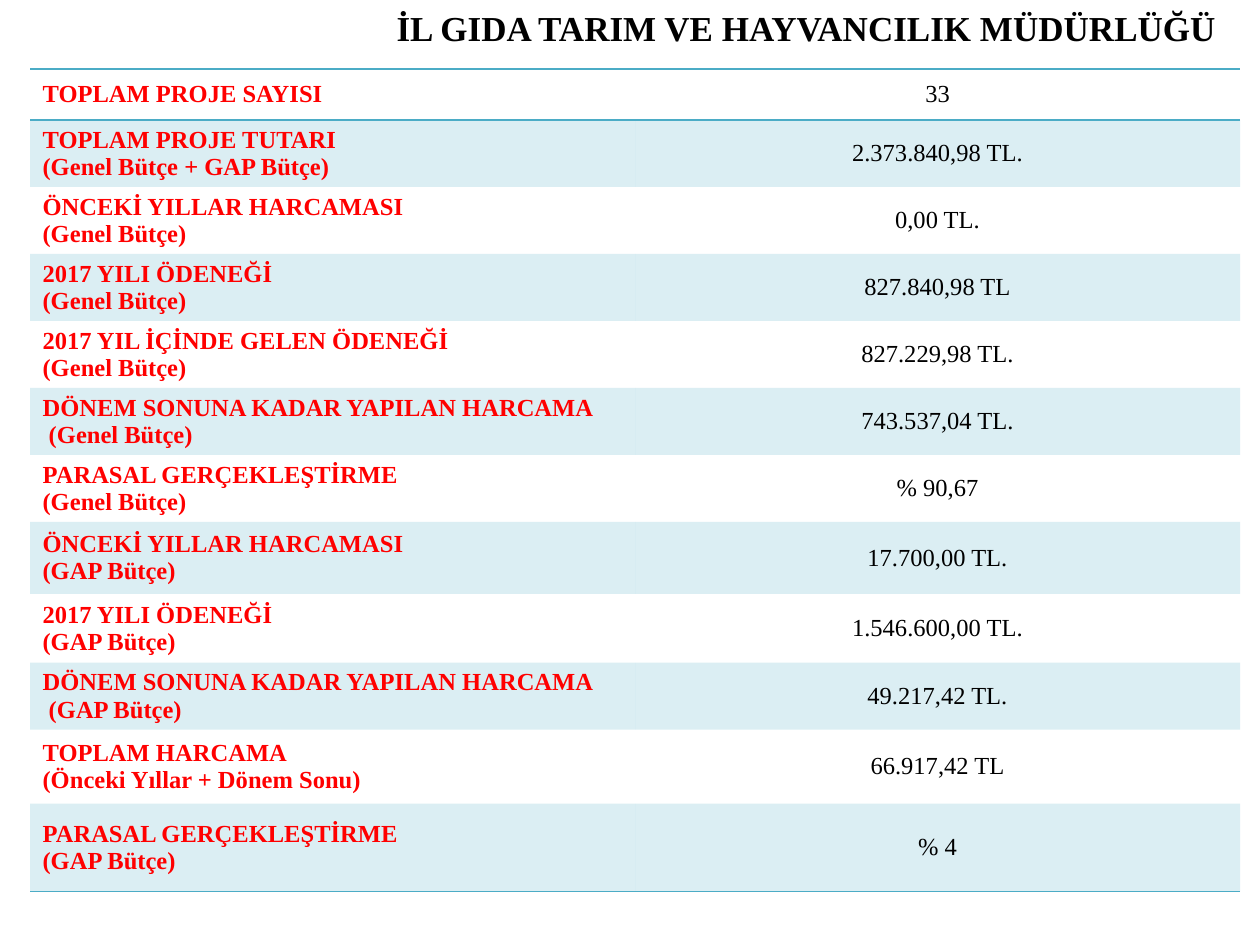
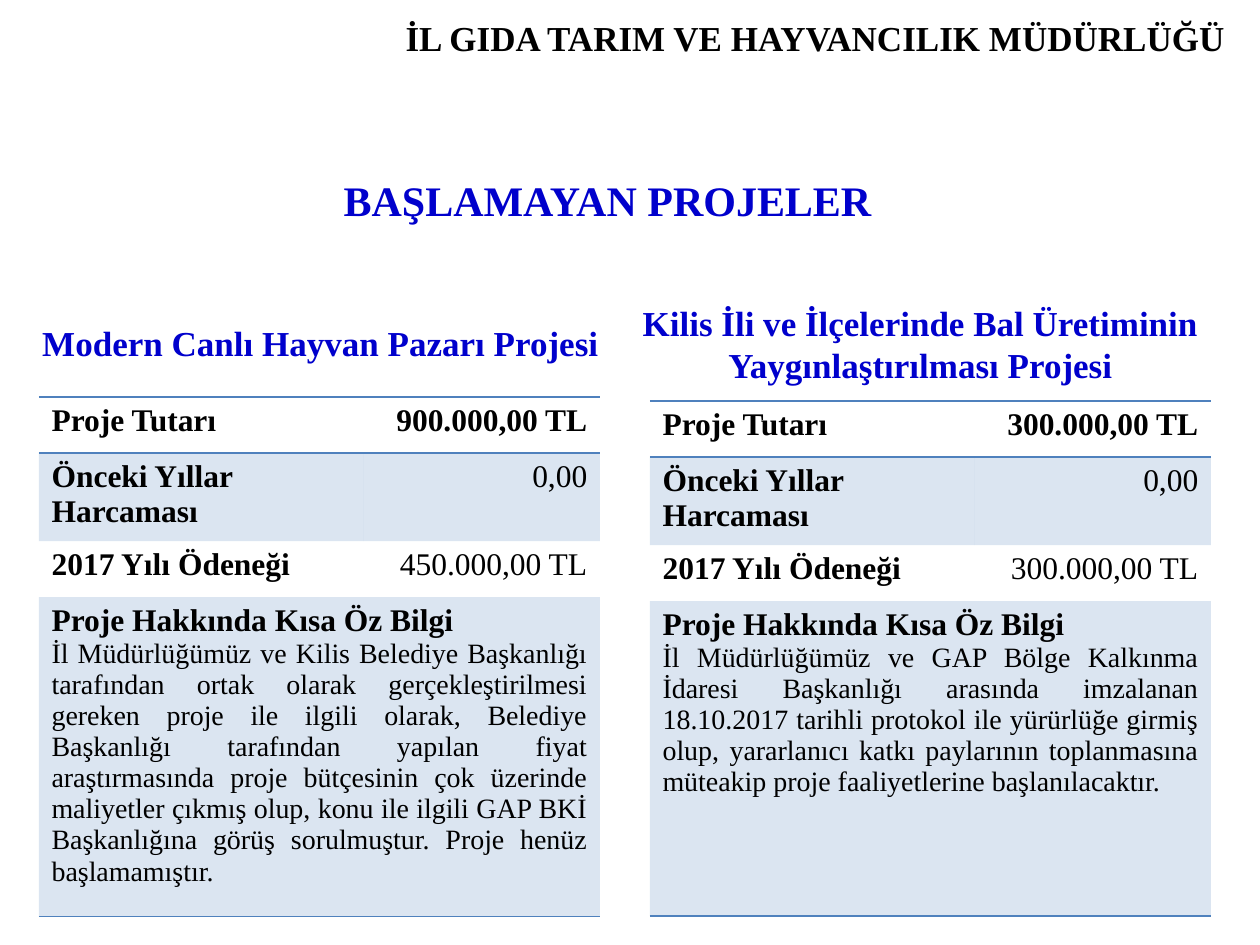
from dataclasses import dataclass

from lxml import etree
from pptx import Presentation, util as u
from pptx.dml.color import RGBColor
from pptx.enum import text
from pptx.oxml import ns

PX_PER_INCH = 126
FONT = "Times New Roman"
BLACK = RGBColor(0x00, 0x00, 0x00)
RED = RGBColor(0xFF, 0x00, 0x00)
HEADING_BLUE = RGBColor(0x00, 0x00, 0xCC)
TEAL = RGBColor(0x4B, 0xAC, 0xC6)
BLUE = RGBColor(0x4F, 0x81, 0xBD)
BAND_ALPHA = "20000"
RULE_WIDTH = u.Pt(1)
PLAIN_TABLE = "{2D5ABB26-0587-4C30-8999-92F81FD0307C}"
LEFT, CENTER, RIGHT, JUSTIFY = (
    text.PP_ALIGN.LEFT, text.PP_ALIGN.CENTER, text.PP_ALIGN.RIGHT, text.PP_ALIGN.JUSTIFY)
TOP, MIDDLE = text.MSO_ANCHOR.TOP, text.MSO_ANCHOR.MIDDLE

TITLE = "İL GIDA TARIM VE HAYVANCILIK MÜDÜRLÜĞÜ"
GENERAL, GAP = "(Genel Bütçe)", "(GAP Bütçe)"


@dataclass(frozen=True)
class Box:
    left: int
    top: int
    width: int
    height: int

    def emu(self) -> list[u.Emu]:
        return [px(n) for n in (self.left, self.top, self.width, self.height)]


@dataclass(frozen=True)
class Para:
    text: str
    size: int
    bold: bool = False
    color: RGBColor = BLACK
    align: text.PP_ALIGN = LEFT


@dataclass(frozen=True)
class Grid:
    left: int
    top: int
    cols: list[int]
    rows: list[int]
    accent: RGBColor
    anchor: text.MSO_ANCHOR


@dataclass(frozen=True)
class SummaryRow:
    label: list[str]
    value: str
    height: int = 67


@dataclass(frozen=True)
class Project:
    heading: str
    heading_box: Box
    left: int
    top: int
    cost: str
    budget: str
    info: str


SUMMARY = [
    SummaryRow(["TOPLAM PROJE SAYISI"], "33", 51),
    SummaryRow(["TOPLAM PROJE TUTARI", "(Genel Bütçe + GAP Bütçe)"], "2.373.840,98 TL."),
    SummaryRow(["ÖNCEKİ YILLAR HARCAMASI", GENERAL], "0,00 TL."),
    SummaryRow(["2017 YILI ÖDENEĞİ", GENERAL], "827.840,98 TL"),
    SummaryRow(["2017 YIL İÇİNDE GELEN ÖDENEĞİ", GENERAL], "827.229,98 TL."),
    SummaryRow(["DÖNEM SONUNA KADAR YAPILAN HARCAMA", " " + GENERAL], "743.537,04 TL."),
    SummaryRow(["PARASAL GERÇEKLEŞTİRME", GENERAL], "% 90,67"),
    SummaryRow(["ÖNCEKİ YILLAR HARCAMASI", GAP], "17.700,00 TL.", 72),
    SummaryRow(["2017 YILI ÖDENEĞİ", GAP], "1.546.600,00 TL.", 69),
    SummaryRow(["DÖNEM SONUNA KADAR YAPILAN HARCAMA", " " + GAP], "49.217,42 TL."),
    SummaryRow(["TOPLAM HARCAMA", "(Önceki Yıllar + Dönem Sonu)"], "66.917,42 TL", 74),
    SummaryRow(["PARASAL GERÇEKLEŞTİRME", GAP], "% 4", 88),
]

PROJECTS = [
    Project(
        "Modern Canlı Hayvan Pazarı Projesi", Box(20, 315, 601, 55), 39, 397,
        "900.000,00 TL", "450.000,00 TL",
        "İl Müdürlüğümüz ve Kilis Belediye Başkanlığı tarafından ortak olarak "
        "gerçekleştirilmesi gereken proje ile ilgili olarak, Belediye Başkanlığı "
        "tarafından yapılan fiyat araştırmasında proje bütçesinin çok üzerinde "
        "maliyetler çıkmış olup, konu ile ilgili GAP BKİ Başkanlığına görüş "
        "sorulmuştur. Proje henüz başlamamıştır."),
    Project(
        "Kilis İli ve İlçelerinde Bal Üretiminin Yaygınlaştırılması Projesi",
        Box(620, 295, 601, 97), 650, 401,
        "300.000,00 TL", "300.000,00 TL",
        "İl Müdürlüğümüz ve GAP Bölge Kalkınma İdaresi Başkanlığı arasında "
        "imzalanan 18.10.2017 tarihli protokol ile yürürlüğe girmiş olup, "
        "yararlanıcı katkı paylarının toplanmasına müteakip proje faaliyetlerine "
        "başlanılacaktır."),
]
PROJECT_BOTTOM = 916
PROJECT_ROWS = [56, 88, 56]


def px(n: int) -> u.Emu:
    return u.Emu(round(n * u.Inches(1) / PX_PER_INCH))


def write(tf, paras: list[Para]) -> None:
    for i, para in enumerate(paras):
        p = tf.paragraphs[0] if i == 0 else tf.add_paragraph()
        p.alignment = para.align
        r = p.add_run()
        r.text = para.text
        r.font.name = FONT
        r.font.size = u.Pt(para.size)
        r.font.bold = para.bold
        r.font.color.rgb = para.color


def add_titled_slide(prs, box: Box):
    s = prs.slides.add_slide(prs.slide_layouts[5])
    sp = s.shapes.title
    sp.left, sp.top, sp.width, sp.height = box.emu()
    tf = sp.text_frame
    tf.word_wrap = True
    tf.auto_size = text.MSO_AUTO_SIZE.NONE
    tf.vertical_anchor = TOP
    write(tf, [Para(TITLE, 20, True)])
    return s


def add_heading(s, box: Box, words: str, size: int) -> None:
    tf = s.shapes.add_textbox(*box.emu()).text_frame
    tf.word_wrap = True
    write(tf, [Para(words, size, True, HEADING_BLUE, CENTER)])


def add_rule(cell, side: str, color: RGBColor) -> None:
    ln = etree.SubElement(cell._tc.get_or_add_tcPr(), ns.qn(f"a:{side}"), w=str(RULE_WIDTH))
    fill = etree.SubElement(ln, ns.qn("a:solidFill"))
    etree.SubElement(fill, ns.qn("a:srgbClr"), val=str(color))


def fill_band(cell, color: RGBColor) -> None:
    cell.fill.solid()
    cell.fill.fore_color.rgb = color
    clr = cell._tc.tcPr.find(f"{ns.qn('a:solidFill')}/{ns.qn('a:srgbClr')}")
    etree.SubElement(clr, ns.qn("a:alpha"), val=BAND_ALPHA)


def add_banded_table(s, grid: Grid, content: list[list[list[Para]]]) -> None:
    box = Box(grid.left, grid.top, sum(grid.cols), sum(grid.rows))
    table = s.shapes.add_table(len(grid.rows), len(grid.cols), *box.emu()).table
    table.first_row = table.horz_banding = False
    table._tbl.tblPr.find(ns.qn("a:tableStyleId")).text = PLAIN_TABLE
    for col, width in zip(table.columns, grid.cols):
        col.width = px(width)
    last = len(grid.rows) - 1
    for i, (row, height) in enumerate(zip(table.rows, grid.rows)):
        row.height = px(height)
        for cell in row.cells:
            cell.vertical_anchor = grid.anchor
            if i == 0:
                add_rule(cell, "lnT", grid.accent)
            if i in (0, last):
                add_rule(cell, "lnB", grid.accent)
            if i % 2:
                fill_band(cell, grid.accent)
            else:
                cell.fill.background()
        if len(content[i]) < len(grid.cols):
            row.cells[0].merge(row.cells[len(grid.cols) - 1])
        for cell, paras in zip(row.cells, content[i]):
            write(cell.text_frame, paras)


def add_project(s, project: Project) -> None:
    add_heading(s, project.heading_box, project.heading, 20)
    info_height = PROJECT_BOTTOM - project.top - sum(PROJECT_ROWS)
    grid = Grid(project.left, project.top, [325, 236], PROJECT_ROWS + [info_height], BLUE, TOP)
    figures = [
        ("Proje Tutarı", project.cost),
        ("Önceki Yıllar Harcaması", "0,00"),
        ("2017 Yılı Ödeneği", project.budget),
    ]
    content = [
        [[Para(label, 18, True)], [Para(value, 18, i == 0, align=RIGHT)]]
        for i, (label, value) in enumerate(figures)
    ]
    content.append([[
        Para("Proje Hakkında Kısa Öz Bilgi", 18, True, align=JUSTIFY),
        Para(project.info, 16, align=JUSTIFY),
    ]])
    add_banded_table(s, grid, content)


def add_summary_slide(prs) -> None:
    s = add_titled_slide(prs, Box(384, 0, 853, 55))
    grid = Grid(30, 69, [605, 605], [row.height for row in SUMMARY], TEAL, MIDDLE)
    content = [
        [[Para(line, 14, True, RED) for line in row.label], [Para(row.value, 14, align=CENTER)]]
        for row in SUMMARY
    ]
    add_banded_table(s, grid, content)


def add_projects_slide(prs) -> None:
    s = add_titled_slide(prs, Box(393, 10, 867, 55))
    add_heading(s, Box(307, 168, 601, 63), "BAŞLAMAYAN PROJELER", 24)
    for project in PROJECTS:
        add_project(s, project)


def main() -> None:
    prs = Presentation()
    prs.slide_width, prs.slide_height = px(1260), px(945)
    add_summary_slide(prs)
    add_projects_slide(prs)
    prs.save("out.pptx")


if __name__ == "__main__":
    main()
